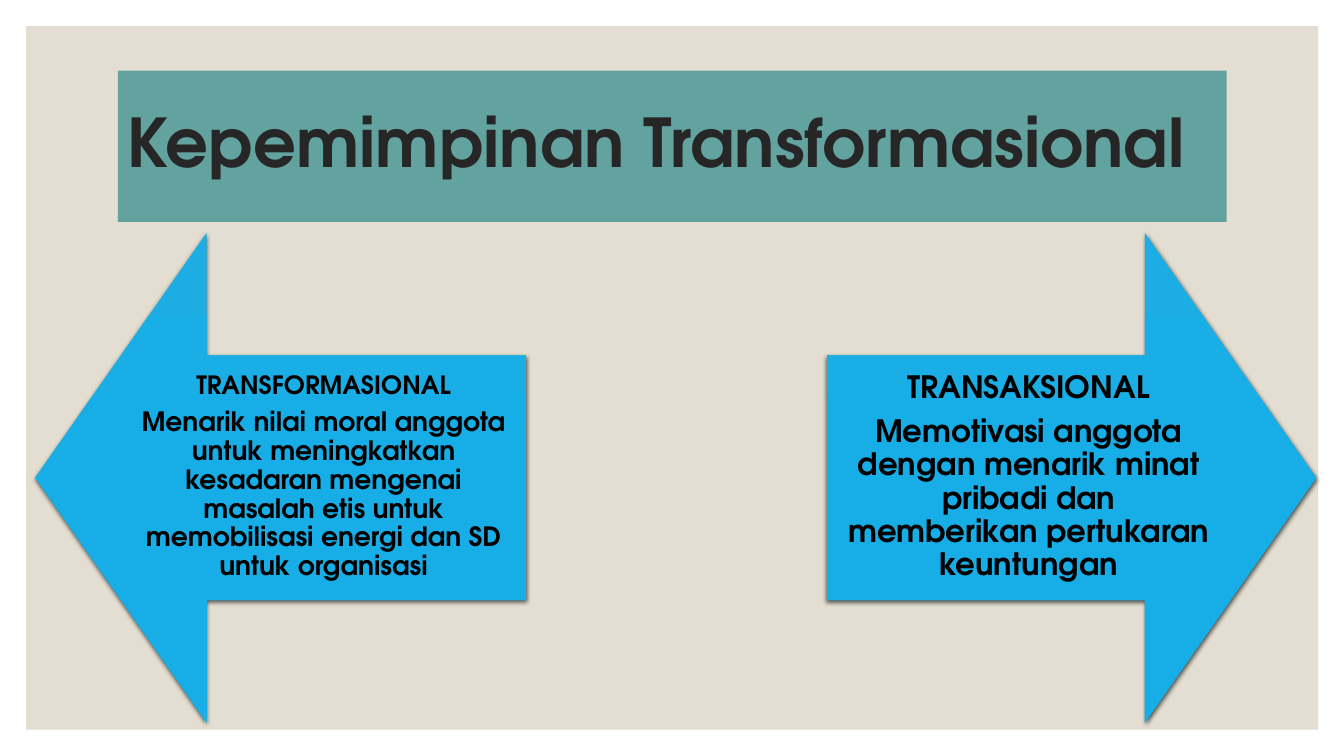
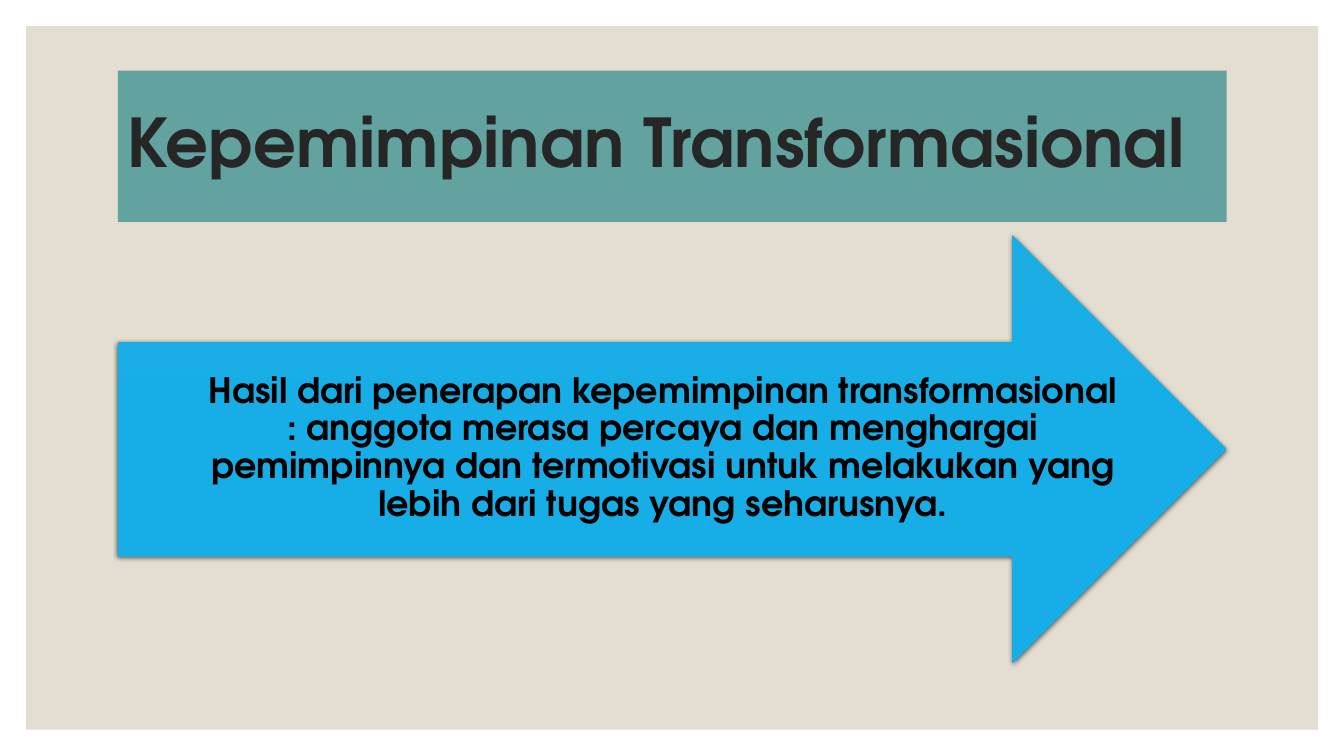
"""Build two slides on transformational leadership."""
from lxml import etree
from pptx import Presentation
from pptx.dml.color import RGBColor
from pptx.enum.shapes import MSO_SHAPE as Kind
from pptx.enum.text import MSO_ANCHOR as Anchor, MSO_AUTO_SIZE as Auto, PP_ALIGN as Align
from pptx.oxml.ns import qn
from pptx.util import Cm, Pt

FONT = "TeX Gyre Adventor"
PANEL, BAND, DARK, BLACK = "E3DED1", "62A39F", "262626", "000000"
SKY = ("1CADE4", 0), ("17AEE8", 0.5)
TITLE = "Kepemimpinan Transformasional"
SLIDES = [
    [
        dict(kind=Kind.LEFT_ARROW, head=0.35, box=(0.89, 5.87, 12.37, 12.34),
             text=(3.05, 8.94, 10.21, 6.17), pad=(0.36, 0.36),
             lines=[("TRANSFORMASIONAL", 18),
                    ("Menarik nilai moral anggota untuk meningkatkan kesadaran mengenai "
                     "masalah etis untuk memobilisasi energi dan SD untuk organisasi", 19)]),
        dict(kind=Kind.RIGHT_ARROW, head=0.35, box=(20.83, 5.87, 12.34, 12.34),
             text=(20.83, 8.94, 10.19, 6.17), pad=(0.43, 0.43),
             lines=[("TRANSAKSIONAL", 22),
                    ("Memotivasi anggota dengan menarik minat pribadi dan "
                     "memberikan pertukaran keuntungan", 22)]),
    ],
    [
        dict(kind=Kind.RIGHT_ARROW, head=0.5, box=(2.97, 5.92, 27.94, 10.8),
             text=(5.23, 8.61, 22.94, 5.38), pad=(0, 0.71),
             lines=[("Hasil dari penerapan kepemimpinan transformasional : anggota merasa "
                     "percaya dan menghargai pemimpinnya dan termotivasi untuk melakukan "
                     "yang lebih dari tugas yang seharusnya.", 25)]),
    ],
]


def rgb(code):
    return RGBColor.from_string(code)


def cm(*nums):
    return [Cm(n) for n in nums]


def paint(shape, code):
    shape.fill.solid()
    shape.fill.fore_color.rgb = rgb(code)


def write(para, text, size, color, align):
    para.alignment = align
    para.line_spacing = 0.9
    run = para.add_run()
    run.text = text
    font = run.font
    font.name, font.size, font.bold = FONT, Pt(size), True
    font.color.rgb = rgb(color)


def panel(slide, layout):
    rect = slide.shapes.add_shape(Kind.RECTANGLE, *cm(0.66, 0.66, 32.56, 17.73))
    rect.shadow.inherit = False
    rect.line.fill.background()
    paint(rect, PANEL)
    node = rect._element
    node.nvSpPr.cNvPr.set("id", "99")
    layout.shapes._spTree.insert(2, node)


def head(slide):
    title = slide.shapes.title
    title.left, title.top, title.width, title.height = cm(2.97, 1.78, 27.94, 3.81)
    paint(title, BAND)
    frame = title.text_frame
    frame.word_wrap, frame.auto_size = True, Auto.NONE
    frame.vertical_anchor = Anchor.MIDDLE
    write(frame.paragraphs[0], TITLE, 48, DARK, Align.LEFT)


def shade(shape):
    shape.shadow.inherit = False
    effects = shape._element.spPr.find(qn("a:effectLst"))
    outer = etree.SubElement(effects, qn("a:outerShdw"), blurRad=str(Pt(3)),
                             dist=str(Pt(1)), dir="5400000", rotWithShape="0")
    color = etree.SubElement(outer, qn("a:srgbClr"), val=BLACK)
    etree.SubElement(color, qn("a:alpha"), val="63000")


def arrow(slide, item):
    shape = slide.shapes.add_shape(item["kind"], *cm(*item["box"]))
    shape.adjustments[0], shape.adjustments[1] = 0.5, item["head"]
    shape.line.fill.background()
    shape.fill.gradient()
    shape.fill.gradient_angle = 270
    for stop, (code, place) in zip(shape.fill.gradient_stops, SKY):
        stop.color.rgb, stop.position = rgb(code), place
    shade(shape)


def label(slide, item):
    frame = slide.shapes.add_textbox(*cm(*item["text"])).text_frame
    frame.word_wrap = True
    frame.vertical_anchor = Anchor.MIDDLE
    side, edge = cm(*item["pad"])
    frame.margin_left = frame.margin_right = side
    frame.margin_top = frame.margin_bottom = edge
    for i, (text, size) in enumerate(item["lines"]):
        para = frame.add_paragraph() if i else frame.paragraphs[0]
        write(para, text, size, BLACK, Align.CENTER)
        para.space_after = Pt(round(size * 0.35, 1))


def main():
    deck = Presentation()
    deck.slide_width, deck.slide_height = cm(33.87, 19.05)
    layout = deck.slide_layouts.get_by_name("Title Only")
    for i, items in enumerate(SLIDES):
        slide = deck.slides.add_slide(layout)
        if i == 0:
            panel(slide, layout)
        head(slide)
        for item in items:
            arrow(slide, item)
            label(slide, item)
    deck.save("out.pptx")


if __name__ == "__main__":
    main()
